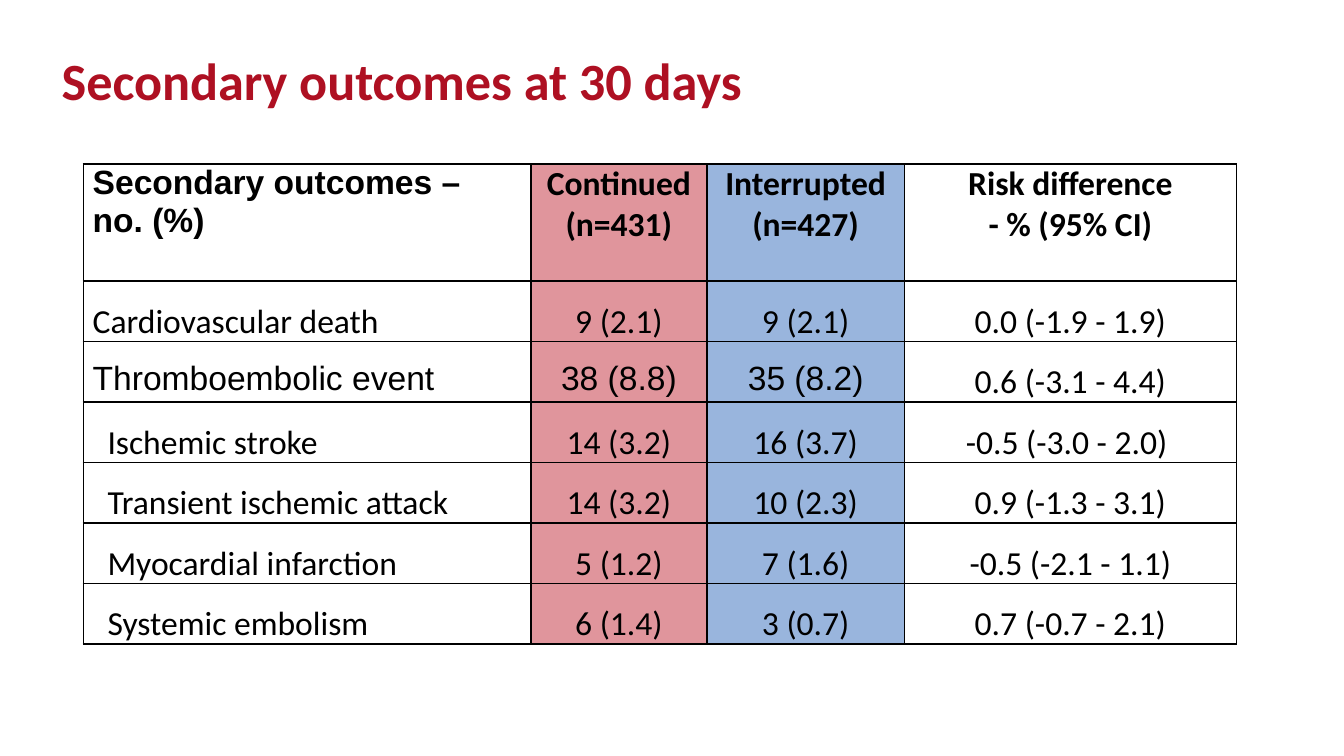
from dataclasses import dataclass
from typing import Optional

import lxml.etree
import pptx
import pptx.dml.color
import pptx.enum.text
import pptx.oxml.ns
import pptx.table
import pptx.util

Inches = pptx.util.Inches
ALIGN = pptx.enum.text.PP_ALIGN


@dataclass(frozen=True)
class Theme:
    title_color: str = "AE1022"
    text_color: str = "000000"
    border_color: str = "000000"
    continued_fill: str = "E0959C"
    interrupted_fill: str = "99B5DD"
    font: str = "Calibri"
    alternate_font: str = "Arial"
    title_size: int = 28
    table_size: int = 18
    border_width: int = 1


@dataclass(frozen=True)
class Column:
    heading: str
    width: float
    fill: Optional[str] = None
    font: str = "Calibri"
    align: ALIGN = ALIGN.CENTER
    right_margin: float = 0.07


@dataclass(frozen=True)
class Outcome:
    name: str
    continued: str
    interrupted: str
    difference: str
    indented: bool = True
    alternate_font: bool = False


THEME = Theme()
HEADER_HEIGHT = 0.87
ROW_HEIGHT = 0.45
LEFT_MARGIN = 0.07
NAME_INDENT = 0.11

COLUMNS = [
    Column("Secondary outcomes – no. (%)", 3.33, font=THEME.alternate_font,
           align=ALIGN.LEFT, right_margin=0.1),
    Column("Continued\n(n=431)", 1.31, THEME.continued_fill),
    Column("Interrupted\n(n=427)", 1.47, THEME.interrupted_fill),
    Column("Risk difference\v- % (95% CI)", 2.47),
]
OUTCOMES = [
    Outcome("Cardiovascular death", "9 (2.1)", "9 (2.1)", "0.0 (-1.9 - 1.9)", indented=False),
    Outcome("Thromboembolic event", "38 (8.8)", "35 (8.2)", "0.6 (-3.1 - 4.4)",
            indented=False, alternate_font=True),
    Outcome("Ischemic stroke", "14 (3.2)", "16 (3.7)", "-0.5 (-3.0 - 2.0) "),
    Outcome("Transient ischemic attack", "14 (3.2)", "10 (2.3)", "0.9 (-1.3 - 3.1)"),
    Outcome("Myocardial infarction", "5 (1.2)", "7 (1.6)", "-0.5 (-2.1 - 1.1)"),
    Outcome("Systemic embolism", "6 (1.4)", "3 (0.7)", "0.7 (-0.7 - 2.1)"),
]


def format_text(text_frame, font: str, size: int, color: str, bold: bool,
                align: ALIGN, line_spacing: float) -> None:
    for paragraph in text_frame.paragraphs:
        paragraph.alignment = align
        paragraph.line_spacing = line_spacing
        for run in paragraph.runs:
            run.font.name = font
            run.font.size = pptx.util.Pt(size)
            run.font.bold = bold
            run.font.color.rgb = pptx.dml.color.RGBColor.from_string(color)


def add_borders(cell: pptx.table._Cell) -> None:
    qualified = pptx.oxml.ns.qn
    properties = cell._tc.get_or_add_tcPr()
    for side in ("a:lnL", "a:lnR", "a:lnT", "a:lnB"):
        line = lxml.etree.SubElement(properties, qualified(side),
                                     w=str(pptx.util.Pt(THEME.border_width)))
        fill = lxml.etree.SubElement(line, qualified("a:solidFill"))
        lxml.etree.SubElement(fill, qualified("a:srgbClr"), val=THEME.border_color)


def fill_cell(cell: pptx.table._Cell, column: Column, text: str, font: str,
              bold: bool, line_spacing: float, indent: float = 0) -> None:
    cell.margin_left = Inches(LEFT_MARGIN + indent)
    cell.margin_right = Inches(column.right_margin)
    cell.margin_top = cell.margin_bottom = Inches(0)
    add_borders(cell)
    if column.fill:
        cell.fill.solid()
        cell.fill.fore_color.rgb = pptx.dml.color.RGBColor.from_string(column.fill)
    else:
        cell.fill.background()
    cell.text_frame.text = text
    format_text(cell.text_frame, font, THEME.table_size, THEME.text_color,
                bold, column.align, line_spacing)


def add_title(slide, text: str) -> None:
    shape = slide.shapes.add_textbox(Inches(0.36), Inches(0.37), Inches(8.35), Inches(0.47))
    shape.text_frame.word_wrap = True
    shape.text_frame.text = text
    format_text(shape.text_frame, THEME.font, THEME.title_size, THEME.title_color,
                True, ALIGN.LEFT, 0.89)


def add_outcome_table(slide) -> None:
    shape = slide.shapes.add_table(
        len(OUTCOMES) + 1, len(COLUMNS), Inches(0.62), Inches(1.22),
        Inches(sum(column.width for column in COLUMNS)),
        Inches(HEADER_HEIGHT + ROW_HEIGHT * len(OUTCOMES)))
    table = shape.table
    table.first_row = False
    table.horz_banding = False
    table.rows[0].height = Inches(HEADER_HEIGHT)
    for index, column in enumerate(COLUMNS):
        table.columns[index].width = Inches(column.width)
        fill_cell(table.cell(0, index), column, column.heading, column.font, True, 1.0)
    for row, outcome in enumerate(OUTCOMES, start=1):
        table.rows[row].height = Inches(ROW_HEIGHT)
        values = (outcome.name, outcome.continued, outcome.interrupted, outcome.difference)
        for index, (column, value) in enumerate(zip(COLUMNS, values)):
            alternate = outcome.alternate_font and value != outcome.difference
            font = THEME.alternate_font if alternate else THEME.font
            indent = NAME_INDENT if outcome.indented and index == 0 else 0
            fill_cell(table.cell(row, index), column, value, font, False, 1.5, indent)


def main() -> None:
    presentation = pptx.Presentation()
    presentation.slide_width = Inches(10)
    presentation.slide_height = Inches(10) * 9 // 16
    slide = presentation.slides.add_slide(presentation.slide_layouts[6])
    add_title(slide, "Secondary outcomes at 30 days")
    add_outcome_table(slide)
    presentation.save("out.pptx")


if __name__ == "__main__":
    main()
